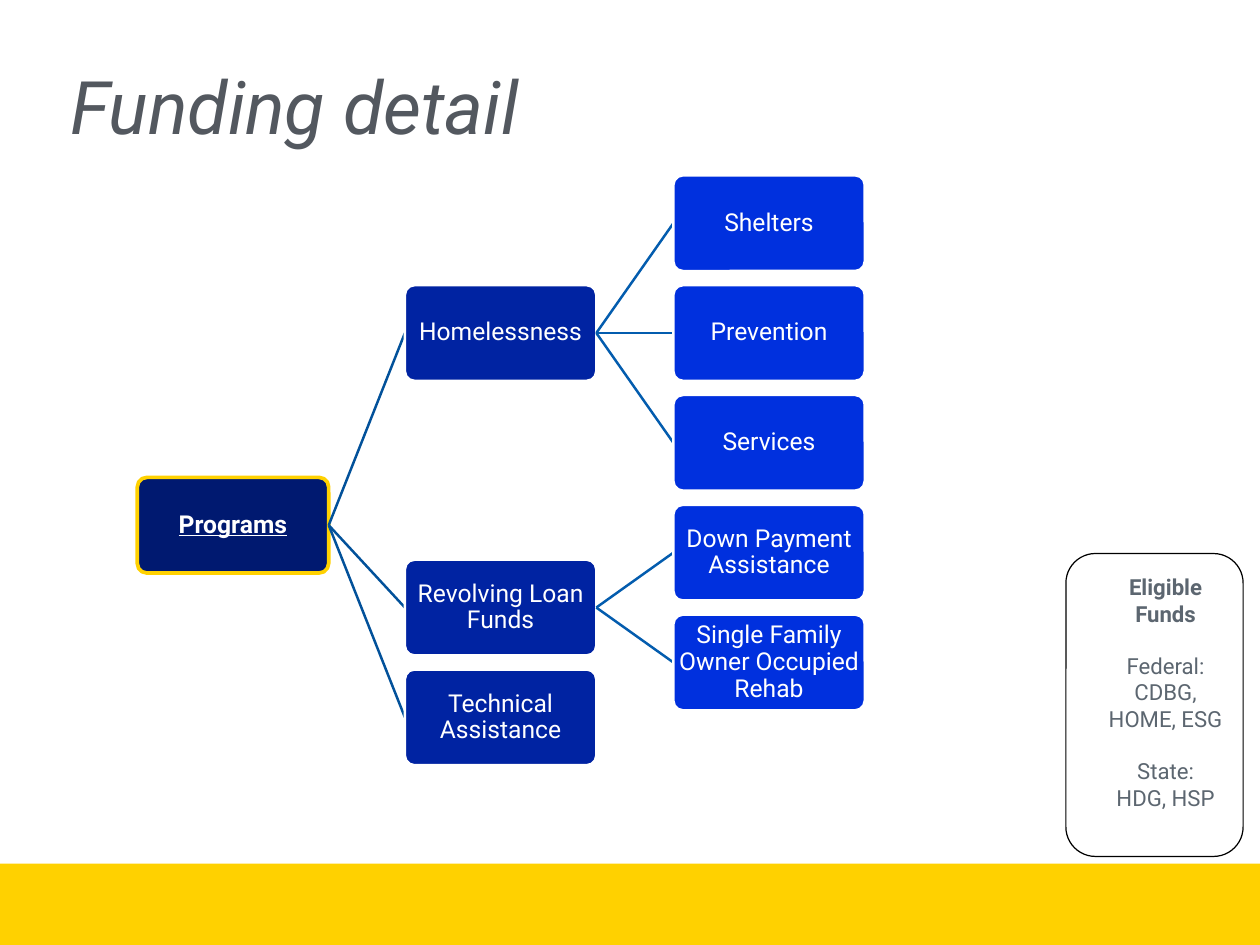
from lxml import etree
from pptx import Presentation
from pptx.dml.color import RGBColor
from pptx.enum.shapes import MSO_CONNECTOR, MSO_SHAPE
from pptx.enum.text import MSO_ANCHOR, MSO_AUTO_SIZE, PP_ALIGN
from pptx.oxml.ns import qn
from pptx.util import Pt

PX = 9144  # 100 px to the inch
STRAIGHT = MSO_CONNECTOR.STRAIGHT
RECT, ROUNDED = MSO_SHAPE.RECTANGLE, MSO_SHAPE.ROUNDED_RECTANGLE
TOP, MIDDLE = MSO_ANCHOR.TOP, MSO_ANCHOR.MIDDLE
LEFT, CENTER = PP_ALIGN.LEFT, PP_ALIGN.CENTER
COLORS = {
    "gold": "FFD100", "title": "53585F", "grey": "5C6670",
    "white": "FFFFFF", "black": "000000",
    "level0": "001970", "level1": "0023A2", "level2": "0030DE",
    "link1": "02519A", "link2": "035CAE",
}


def rgb(name):
    return RGBColor.from_string(COLORS[name])


def write(s, text, size, color, bold=False, italic=False, underline=False,
          align=CENTER, anchor=MIDDLE, insets=(1, 1, 1, 1), spacing=1.0,
          indent=0, before=0):
    """Add one paragraph to a shape, filling its empty first one if it can."""
    tf = s.text_frame
    tf.word_wrap, tf.auto_size = True, MSO_AUTO_SIZE.NONE
    tf.vertical_anchor = anchor
    tf.margin_left, tf.margin_top, tf.margin_right, tf.margin_bottom = (
        v * PX for v in insets)
    p = tf.add_paragraph() if tf.text else tf.paragraphs[0]
    p.alignment, p.line_spacing, p.space_before = align, spacing, Pt(before)
    if indent:
        p._p.get_or_add_pPr().set("marL", str(indent * PX))
    r = p.add_run()
    r.text = text
    r.font.name, r.font.size = "Roboto", Pt(size)
    r.font.bold, r.font.italic, r.font.underline = bold, italic, underline
    r.font.color.rgb = rgb(color)


prs = Presentation()
prs.slide_width, prs.slide_height = 1422 * PX, 1067 * PX
slide = prs.slides.add_slide(prs.slide_layouts[5])
shapes = slide.shapes

# Footer band
band = shapes.add_shape(RECT, 0, 975 * PX, 1422 * PX, 92 * PX)
band.shadow.inherit = False
band.fill.solid()
band.fill.fore_color.rgb = rgb("gold")
band.line.fill.background()

# Title
title = shapes.title
title.left, title.top, title.width, title.height = (
    v * PX for v in (69, 58, 1200, 137))
write(title, "Funding detail", 60, "title", italic=True, align=LEFT,
      anchor=TOP, insets=(10, 11, 10, 5))

# Program tree: name, parent, level, row (halves and quarters sit between rows)
TREE = [
    ("Programs", None, 0, 2.75),
    ("Homelessness", "Programs", 1, 1),
    ("Shelters", "Homelessness", 2, 0),
    ("Prevention", "Homelessness", 2, 1),
    ("Services", "Homelessness", 2, 2),
    ("Revolving Loan Funds", "Programs", 1, 3.5),
    ("Down Payment Assistance", "Revolving Loan Funds", 2, 3),
    ("Single Family Owner Occupied Rehab", "Revolving Loan Funds", 2, 4),
    ("Technical Assistance", "Programs", 1, 4.5),
]
LEVEL_X = (155, 457, 760)
ROW_TOP, ROW_STEP = 198, 124
BOX_W, BOX_H = 216, 108

boxes = {}
for name, parent, level, row in TREE:
    x, y = LEVEL_X[level], round(ROW_TOP + row * ROW_STEP)
    if parent:  # the link lies beneath the box it leads to
        link = shapes.add_connector(STRAIGHT, 0, 0, x * PX, y * PX)
        link.line.color.rgb = rgb(f"link{level}")
        link.line.width = Pt(2)
        etree.SubElement(link._element.spPr, qn("a:effectLst"))
    s = shapes.add_shape(ROUNDED, x * PX, y * PX, BOX_W * PX, BOX_H * PX)
    s.shadow.inherit = False
    s.adjustments[0] = 0.1
    s.fill.solid()
    s.fill.fore_color.rgb = rgb(f"level{level}")
    s.line.color.rgb = rgb("white" if parent else "gold")
    s.line.width = Pt(2 if parent else 3)
    write(s, name, 20, "white", bold=not parent, underline=not parent,
          spacing=0.9)
    boxes[name] = s
    if parent:
        link.begin_connect(boxes[parent], 3)
        link.end_connect(s, 1)

# Eligible funds panel
panel = shapes.add_shape(ROUNDED, 1203 * PX, 625 * PX, 200 * PX, 342 * PX)
panel.shadow.inherit = False
panel.fill.background()
panel.line.color.rgb = rgb("black")
panel.line.width = Pt(1)
FUNDS = [
    ("Eligible Funds", True, 0),
    ("Federal:", False, 21),
    ("CDBG, HOME, ESG", False, 0),
    ("State:", False, 21),
    ("HDG, HSP", False, 0),
]
for text, bold, before in FUNDS:
    write(panel, text, 18, "grey", bold=bold, before=before, indent=25,
          insets=(6, 6, 6, 35))

prs.save("out.pptx")
